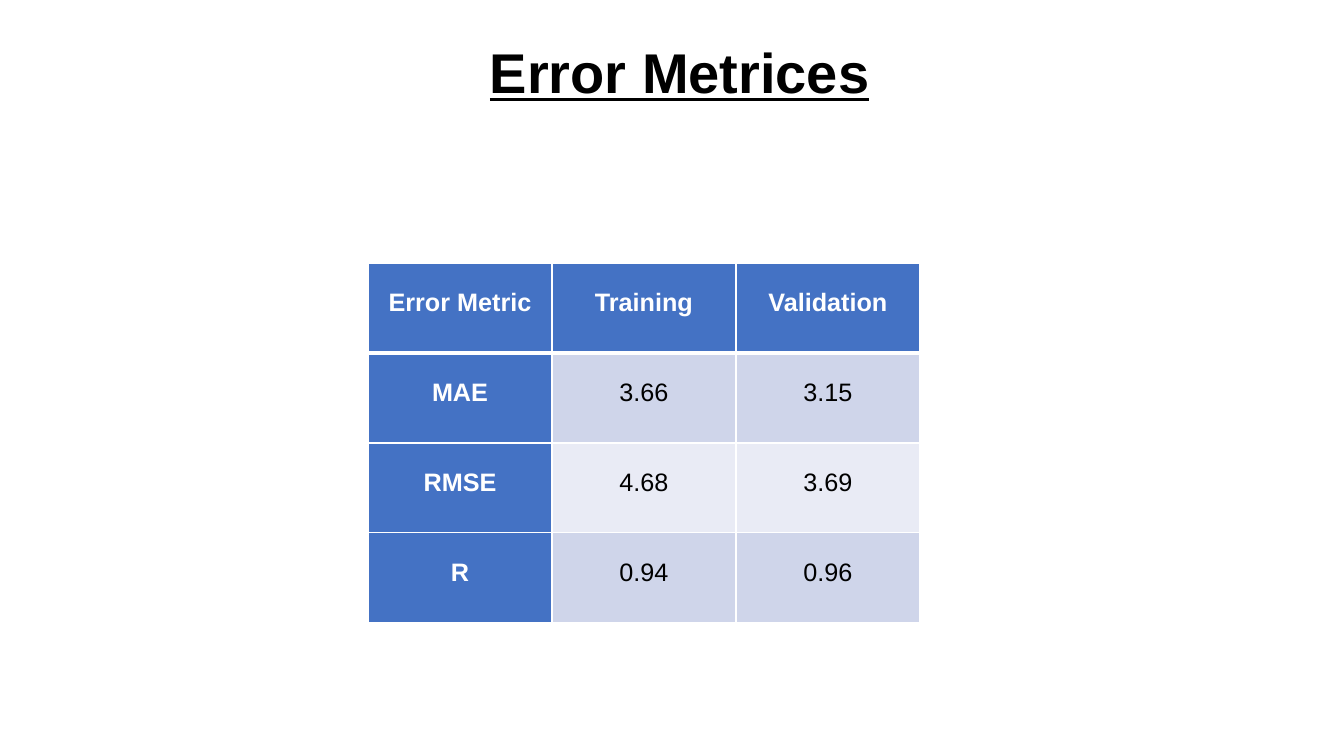
import pptx
import pptx.util
import pptx.dml.color
import pptx.enum.text
import pptx.oxml
import pptx.oxml.ns

PX = 914400 / 100.8
THEME = {
    "font": "Arial",
    "title_size": 40,
    "cell_size": 18,
    "line_spacing": 13,
    "black": "000000",
    "white": "FFFFFF",
    "header": "4472C4",
    "bands": ["CFD5EA", "E9EBF5"],
}
METRICS = [
    ["Error Metric", "Training", "Validation"],
    ["MAE", "3.66", "3.15"],
    ["RMSE", "4.68", "3.69"],
    ["R", "0.94", "0.96"],
]


def px(*lengths):
    return [pptx.util.Emu(round(n * PX)) for n in lengths]


def write(tf, text, spacing, color, font_values):
    p = tf.paragraphs[0]
    p.alignment = pptx.enum.text.PP_ALIGN.CENTER
    p.line_spacing = spacing
    r = p.add_run()
    r.text = text
    r.font.name = THEME["font"]
    r.font.color.rgb = pptx.dml.color.RGBColor.from_string(color)
    for name, value in font_values.items():
        setattr(r.font, name, value)


prs = pptx.Presentation()
prs.slide_width, prs.slide_height = px(1344, 756)
s = prs.slides.add_slide(prs.slide_layouts[6])

title = s.shapes.add_textbox(*px(100, 2, 1159, 146))
tf = title.text_frame
tf.word_wrap = True
tf.vertical_anchor = pptx.enum.text.MSO_ANCHOR.MIDDLE
write(tf, "Error Metrices", 0.9, THEME["black"],
      {"size": pptx.util.Pt(THEME["title_size"]), "bold": True, "underline": True})

COLUMN, ROW = 184, 90
columns, rows = len(METRICS[0]), len(METRICS)
table = s.shapes.add_table(
    rows, columns, *px(368, 263, COLUMN * columns, ROW * rows)).table
table.first_col = True
for column in table.columns:
    column.width = px(COLUMN)[0]
for row in table.rows:
    row.height = px(ROW)[0]

for i, values in enumerate(METRICS):
    for j, text in enumerate(values):
        cell = table.cell(i, j)
        is_header = i == 0 or j == 0
        cell.vertical_anchor = pptx.enum.text.MSO_ANCHOR.MIDDLE
        for side in ("left", "right", "top", "bottom"):
            setattr(cell, "margin_" + side, 0)
        write(cell.text_frame, text, pptx.util.Pt(THEME["line_spacing"]),
              THEME["white"] if is_header else THEME["black"],
              {"size": pptx.util.Pt(THEME["cell_size"]), "bold": is_header})
        tc_pr = cell._tc.get_or_add_tcPr()
        for edge in "LRTB":
            thick = (i, edge) in ((0, "B"), (1, "T"))
            tc_pr.append(pptx.oxml.parse_xml(
                f'<a:ln{edge} {pptx.oxml.ns.nsdecls("a")} '
                f'w="{pptx.util.Pt(3 if thick else 1)}"><a:solidFill>'
                f'<a:srgbClr val="{THEME["white"]}"/></a:solidFill></a:ln{edge}>'))
        cell.fill.solid()
        cell.fill.fore_color.rgb = pptx.dml.color.RGBColor.from_string(
            THEME["header"] if is_header else THEME["bands"][(i - 1) % 2])

prs.save("out.pptx")
